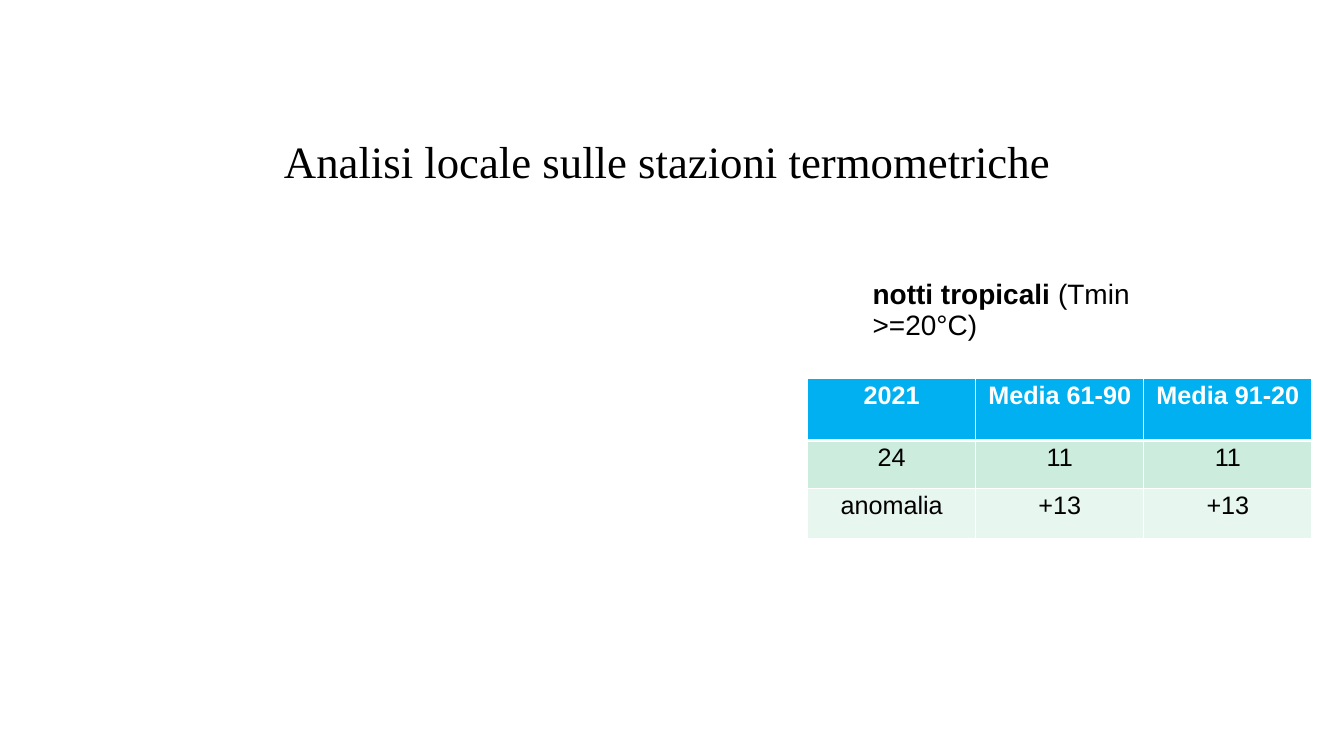
from lxml.etree import SubElement
from pptx import Presentation
from pptx.dml.color import RGBColor
from pptx.enum.text import MSO_ANCHOR as Anchor, PP_ALIGN as Align
from pptx.oxml.ns import qn
from pptx.util import Emu, Pt

EMU_PER_PX = 9080
COLORS = {"text": "000000", "white": "FFFFFF", "header": "00B0F0",
          "band_dark": "CCECDE", "band_light": "E7F6EF"}
LINE_SPACING = 0.93


def px(length):
    return Emu(length * EMU_PER_PX)


def color(name):
    return RGBColor.from_string(COLORS[name])


class SlideBuilder:
    def __init__(self, presentation):
        self.slide = presentation.slides.add_slide(presentation.slide_layouts[5])

    def style(self, paragraph, size, color_name="text", name="Arial", bold=None):
        font = paragraph.font
        font.name, font.size, font.bold = name, Pt(size), bold
        font.color.rgb = color(color_name)

    def title(self, text, left, top, width, height):
        shape = self.slide.shapes.title
        shape.left, shape.top, shape.width, shape.height = map(px, (left, top, width, height))
        frame = shape.text_frame
        frame.text = text
        frame.vertical_anchor = Anchor.TOP
        frame.margin_left = frame.margin_right = frame.margin_bottom = 0
        frame.margin_top = px(9)
        paragraph = frame.paragraphs[0]
        paragraph.alignment = Align.CENTER
        self.style(paragraph, 32, name="Times New Roman")

    def label(self, runs, left, top, width, height):
        """Add a text box from (text, bold) runs."""
        frame = self.slide.shapes.add_textbox(*map(px, (left, top, width, height))).text_frame
        frame.word_wrap = True
        frame.vertical_anchor = Anchor.MIDDLE
        paragraph = frame.paragraphs[0]
        paragraph.line_spacing = LINE_SPACING
        self.style(paragraph, 20)
        for text, bold in runs:
            run = paragraph.add_run()
            run.text, run.font.bold = text, bold

    def border(self, cell, side, points):
        line = SubElement(cell._tc.get_or_add_tcPr(), qn(f"a:ln{side}"), w=str(Pt(points)))
        fill = SubElement(line, qn("a:solidFill"))
        SubElement(fill, qn("a:srgbClr"), val=COLORS["white"])

    def table(self, rows, fills, left, top, column_width, row_heights):
        columns = len(rows[0])
        table = self.slide.shapes.add_table(
            len(rows), columns, px(left), px(top),
            px(column_width * columns), px(sum(row_heights))).table
        for column in table.columns:
            column.width = px(column_width)
        for index, (values, fill, height) in enumerate(zip(rows, fills, row_heights)):
            table.rows[index].height = px(height)
            is_header = index == 0
            widths = {"L": 1, "R": 1, "T": 3 if index == 1 else 1, "B": 3 if is_header else 1}
            for cell, value in zip(table.rows[index].cells, values):
                for side, points in widths.items():
                    self.border(cell, side, points)
                cell.fill.solid()
                cell.fill.fore_color.rgb = color(fill)
                cell.text = value
                paragraph = cell.text_frame.paragraphs[0]
                paragraph.alignment = Align.CENTER
                paragraph.line_spacing = LINE_SPACING
                self.style(paragraph, 18, "white" if is_header else "text", bold=is_header)


def main():
    presentation = Presentation()
    presentation.slide_width, presentation.slide_height = px(1343), px(755)
    builder = SlideBuilder(presentation)
    builder.title("Analisi locale sulle stazioni termometriche", 29, 124, 1276, 63)
    builder.label([("notti tropicali ", True), ("(Tmin >=20°C)", False)], 862, 290, 384, 41)
    builder.table(
        [["2021", "Media 61-90", "Media 91-20"],
         ["24", "11", "11"],
         ["anomalia", "+13", "+13"]],
        ["header", "band_dark", "band_light"],
        left=807, top=378, column_width=168, row_heights=[62, 48, 50])
    presentation.save("out.pptx")


if __name__ == "__main__":
    main()
